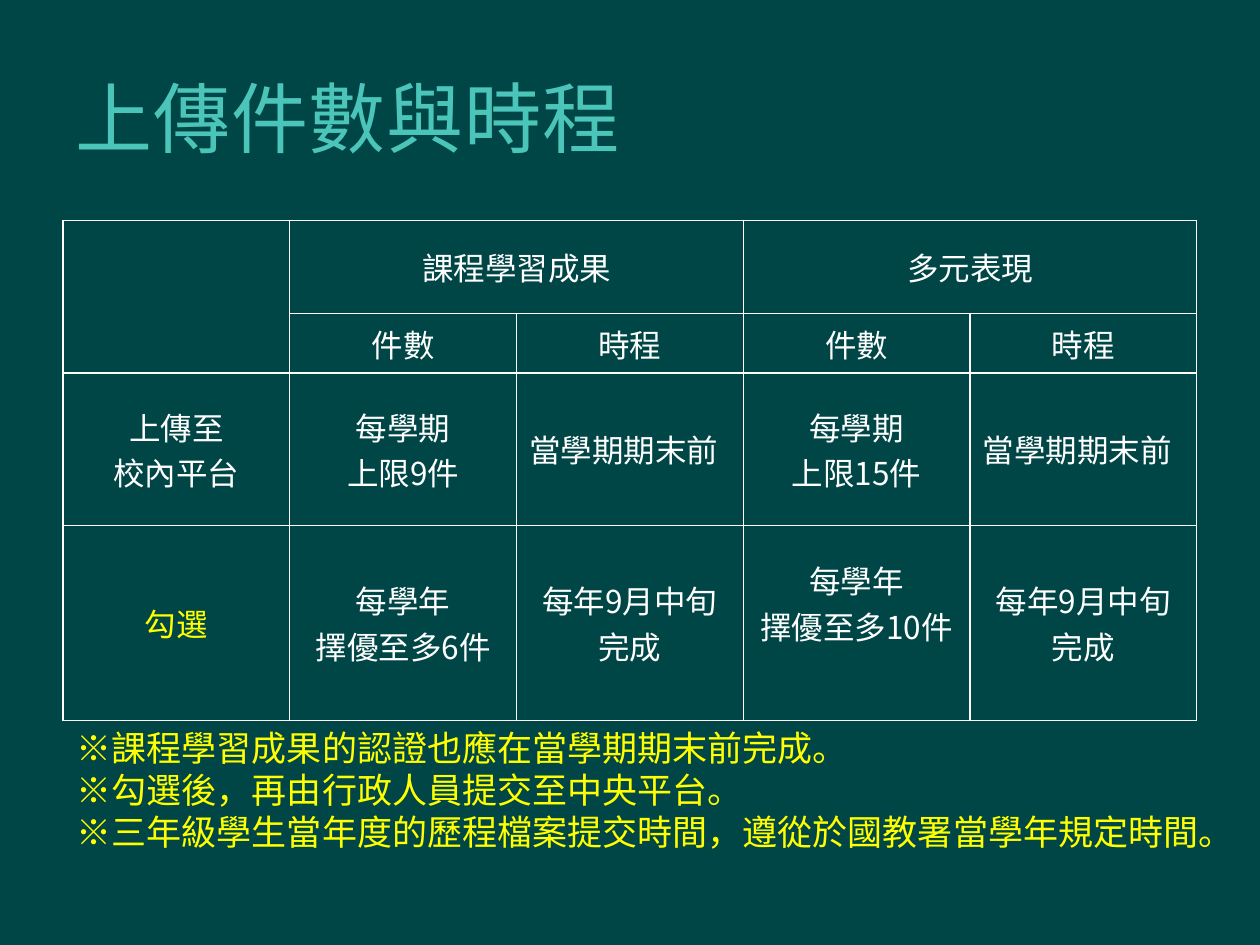
from dataclasses import dataclass

from lxml.etree import SubElement
from pptx import Presentation
from pptx.dml.color import RGBColor
from pptx.enum.text import MSO_ANCHOR as Anchor, PP_ALIGN as Align
from pptx.oxml.ns import qn
from pptx.util import Inches, Pt

COLORS = {"background": "004646", "title": "4BC5B9", "text": "FFFFFF", "accent": "FFFF00"}
WIDTH, HEIGHT = 10, 7.5
BODY_FONT, TITLE_FONT = "Noto Sans CJK SC", "Roboto"
COLUMN_WIDTH = 0.18 * WIDTH
ROW_HEIGHTS = (0.74, 0.47, 1.21, 1.55)


@dataclass(frozen=True)
class Style:
    size: float
    color: str
    font: str = BODY_FONT
    spacing: int = 0


@dataclass(frozen=True)
class Cell:
    row: int
    column: int
    text: str = ""
    rows: int = 1
    columns: int = 1
    align: Align = Align.CENTER
    color: str = "text"
    bottom: float = 0.05


def write(paragraph, text: str, style: Style) -> None:
    """Add one run per line, joined by line breaks."""
    for index, line in enumerate(text.split("\n")):
        if index:
            paragraph.add_line_break()
        run = paragraph.add_run()
        run.text = line
        run.font.size = Pt(style.size)
        run.font.name = style.font
        run.font.color.rgb = RGBColor.from_string(COLORS[style.color])
        properties = run.font._element
        SubElement(properties, qn("a:ea"), typeface=style.font)
        if style.spacing:
            properties.set("spc", str(style.spacing))


def add_text(slide, left: float, top: float, width: float, height: float,
             text: str, style: Style, anchor: Anchor = Anchor.TOP):
    box = slide.shapes.add_textbox(Inches(left), Inches(top), Inches(width), Inches(height))
    frame = box.text_frame
    frame.word_wrap = True
    frame.vertical_anchor = anchor
    write(frame.paragraphs[0], text, style)
    return frame.paragraphs[0]


def set_borders(cell) -> None:
    properties = cell._tc.get_or_add_tcPr()
    for position, side in enumerate(("a:lnL", "a:lnR", "a:lnT", "a:lnB")):
        line = SubElement(properties, qn(side), w=str(Pt(1)))
        fill = SubElement(line, qn("a:solidFill"))
        SubElement(fill, qn("a:srgbClr"), val=COLORS["text"])
        properties.remove(line)
        properties.insert(position, line)


def fill_cell(table, item: Cell) -> None:
    cell = table.cell(item.row, item.column)
    if item.rows * item.columns > 1:
        cell.merge(table.cell(item.row + item.rows - 1, item.column + item.columns - 1))
    cell.vertical_anchor = Anchor.MIDDLE
    cell.margin_bottom = Inches(item.bottom)
    paragraph = cell.text_frame.paragraphs[0]
    paragraph.alignment = item.align
    if item.text:
        write(paragraph, item.text, Style(18, item.color))


CELLS = [
    Cell(0, 0, rows=2),
    Cell(0, 1, "課程學習成果", columns=2),
    Cell(0, 3, "多元表現", columns=2),
    Cell(2, 0, "上傳至\n校內平台"),
    Cell(2, 1, "每學期\n上限9件"),
    Cell(2, 3, "每學期\n上限15件"),
    Cell(3, 0, "勾選", color="accent"),
    Cell(3, 1, "每學年\n擇優至多6件"),
    Cell(3, 3, "每學年\n擇優至多10件", bottom=0.37),
]
# Both categories share the same headings and deadlines
for first in (1, 3):
    CELLS += [
        Cell(1, first, "件數"),
        Cell(1, first + 1, "時程"),
        Cell(2, first + 1, "當學期期末前", align=Align.LEFT),
        Cell(3, first + 1, "每年9月中旬完成"),
    ]

NOTES = """※課程學習成果的認證也應在當學期期末前完成。
※勾選後，再由行政人員提交至中央平台。
※三年級學生當年度的歷程檔案提交時間，遵從於國教署當學年規定時間。"""


def main() -> None:
    presentation = Presentation()
    presentation.slide_width, presentation.slide_height = Inches(WIDTH), Inches(HEIGHT)
    slide = presentation.slides.add_slide(presentation.slide_layouts[6])
    background = slide.background.fill
    background.solid()
    background.fore_color.rgb = RGBColor.from_string(COLORS["background"])

    # Title
    add_text(slide, 0.05 * WIDTH, 0.04 * HEIGHT, 0.85 * WIDTH, 1.25,
             "上傳件數與時程", Style(44, "title", TITLE_FONT, 50), Anchor.MIDDLE)

    # Upload table
    table = slide.shapes.add_table(
        len(ROW_HEIGHTS), 5, Inches(0.05 * WIDTH), Inches(1.75),
        Inches(5 * COLUMN_WIDTH), Inches(sum(ROW_HEIGHTS))).table
    table.first_row = table.horz_banding = False
    for column in table.columns:
        column.width = Inches(COLUMN_WIDTH)
    for row, height in zip(table.rows, ROW_HEIGHTS):
        row.height = Inches(height)
    for cell in table.iter_cells():
        cell.fill.background()
        set_borders(cell)
    for item in CELLS:
        fill_cell(table, item)

    # Notes below the table
    notes = add_text(slide, 0.51, 5.72, 9.29, 1.11, NOTES, Style(20, "accent"))
    notes.line_spacing = Pt(24)

    presentation.save("out.pptx")


if __name__ == "__main__":
    main()
